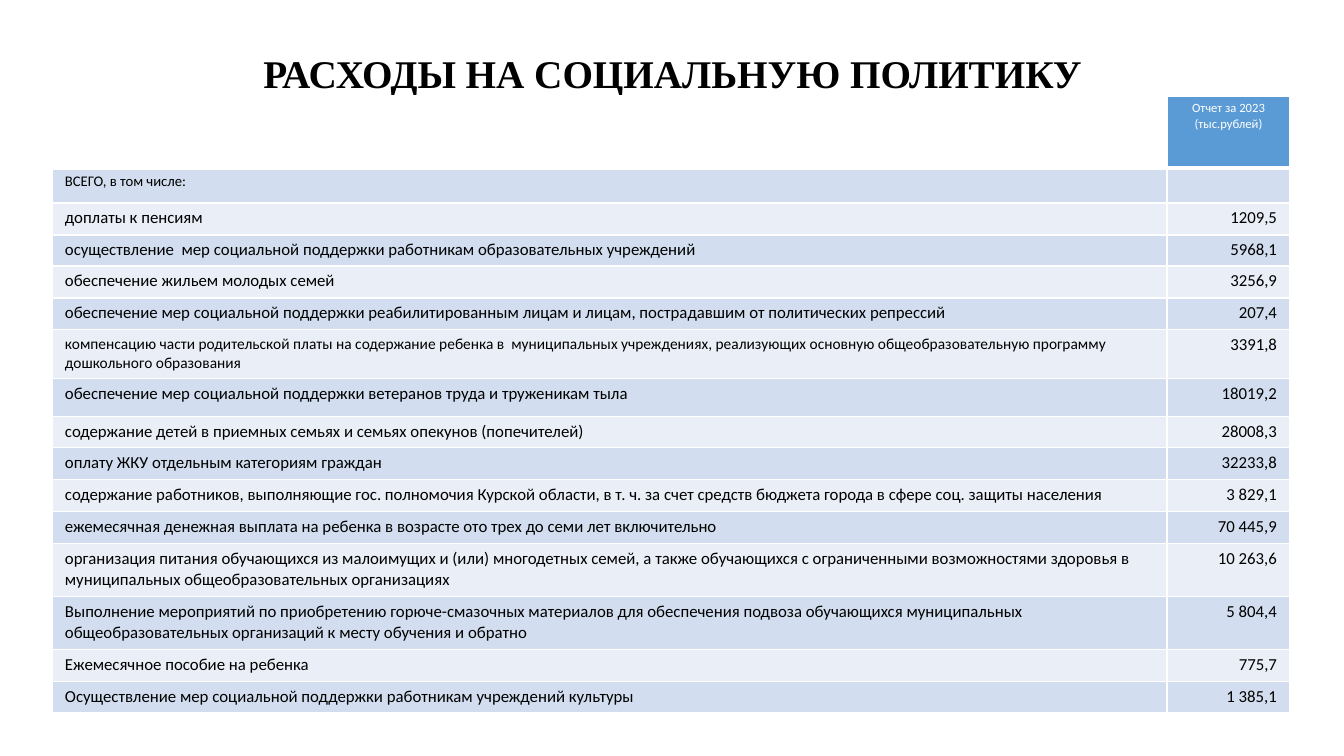
"""Builds a slide with a table of social policy spending."""
from lxml.etree import SubElement
from pptx import Presentation
from pptx.dml.color import RGBColor
from pptx.enum.text import MSO_ANCHOR, PP_ALIGN
from pptx.oxml.ns import qn
from pptx.util import Emu, Pt

TITLE = "РАСХОДЫ НА СОЦИАЛЬНУЮ ПОЛИТИКУ"
HEADER = ["Отчет за 2023", "(тыс.рублей)"]
EXPENSES = [
    ("ВСЕГО, в том числе:", "", 35, 10.5),
    ("доплаты к пенсиям", "1209,5", 32, 12),
    ("осуществление  мер социальной поддержки работникам образовательных учреждений", "5968,1", 31, 12),
    ("обеспечение жильем молодых семей", "3256,9", 32, 12),
    ("обеспечение мер социальной поддержки реабилитированным лицам и лицам, "
     "пострадавшим от политических репрессий", "207,4", 32, 12),
    ("компенсацию части родительской платы на содержание ребенка в  муниципальных учреждениях, "
     "реализующих основную общеобразовательную программу дошкольного образования", "3391,8", 49, 11),
    ("обеспечение мер социальной поддержки ветеранов труда и труженикам тыла", "18019,2", 38, 12),
    ("содержание детей в приемных семьях и семьях опекунов (попечителей)", "28008,3", 31, 12),
    ("оплату ЖКУ отдельным категориям граждан", "32233,8", 32, 12),
    ("содержание работников, выполняющие гос. полномочия Курской области, в т. ч. за счет "
     "средств бюджета города в сфере соц. защиты населения", "3 829,1", 32, 12),
    ("ежемесячная денежная выплата на ребенка в возрасте ото трех до семи лет включительно",
     "70 445,9", 32, 12),
    ("организация питания обучающихся из малоимущих и (или) многодетных семей, а также обучающихся "
     "с ограниченными возможностями здоровья в муниципальных общеобразовательных организациях",
     "10 263,6", 53, 12),
    ("Выполнение мероприятий по приобретению горюче-смазочных материалов для обеспечения подвоза "
     "обучающихся муниципальных общеобразовательных организаций к месту обучения и обратно",
     "5 804,4", 53, 12),
    ("Ежемесячное пособие на ребенка", "775,7", 32, 12),
    ("Осуществление мер социальной поддержки работникам учреждений культуры", "1 385,1", 31, 12),
]
HEADER_HEIGHT = 72
COLUMN_WIDTHS = [1115, 123]
BANDS = ["D2DEEF", "EAEFF7"]
BLACK, WHITE, BLUE = "000000", "FFFFFF", "5B9BD5"


def px(length):
    return Emu(round(length * 914400 / 100.8))


def color(value):
    return RGBColor.from_string(value)


class SlideBuilder:
    def __init__(self, slide, font="Calibri", title_font="Times New Roman"):
        self.slide = slide
        self.font = font
        self.title_font = title_font

    def add_run(self, paragraph, text, size, text_color, font, bold=False):
        run = paragraph.add_run()
        run.text = text
        run.font.size = Pt(size)
        run.font.name = font
        run.font.bold = bold
        run.font.color.rgb = color(text_color)

    def title(self, text, left, top, width, height):
        shape = self.slide.shapes.title
        shape.left, shape.top, shape.width, shape.height = map(px, (left, top, width, height))
        frame = shape.text_frame
        frame.word_wrap = True
        frame.vertical_anchor = MSO_ANCHOR.MIDDLE
        paragraph = frame.paragraphs[0]
        paragraph.alignment = PP_ALIGN.CENTER
        paragraph.line_spacing = 0.9
        self.add_run(paragraph, text, 28, BLACK, self.title_font, True)
        paragraph.add_line_break()

    def table(self, left, top, widths, heights):
        frame = self.slide.shapes.add_table(
            len(heights), len(widths), px(left), px(top), px(sum(widths)), px(sum(heights)))
        table = frame.table
        table.first_row = table.horz_banding = False
        for column, width in zip(table.columns, widths):
            column.width = px(width)
        for row, height in zip(table.rows, heights):
            row.height = px(height)
        return table

    def border(self, cell, side, width):
        line = SubElement(cell._tc.get_or_add_tcPr(), qn(f"a:{side}"), w=str(Pt(width)))
        fill = SubElement(line, qn("a:solidFill"))
        SubElement(fill, qn("a:srgbClr"), val=WHITE)

    def cell(self, cell, lines, size, text_color, alignment, fill, top=1, bottom=1):
        cell.margin_left = cell.margin_right = px(13)
        cell.margin_top = cell.margin_bottom = px(5)
        for side, width in (("lnL", 1), ("lnR", 1), ("lnT", top), ("lnB", bottom)):
            self.border(cell, side, width)
        if fill:
            cell.fill.solid()
            cell.fill.fore_color.rgb = color(fill)
        else:
            cell.fill.background()
        frame = cell.text_frame
        for index, text in enumerate(lines):
            paragraph = frame.paragraphs[0] if index == 0 else frame.add_paragraph()
            paragraph.alignment = alignment
            if text:
                self.add_run(paragraph, text, size, text_color, self.font)
            else:
                paragraph._p.get_or_add_endParaRPr().set("sz", str(round(size * 100)))


def main():
    presentation = Presentation()
    presentation.slide_width, presentation.slide_height = px(1344), px(756)
    builder = SlideBuilder(presentation.slides.add_slide(presentation.slide_layouts[5]))
    builder.title(TITLE, 93, 40, 1159, 146)

    heights = [HEADER_HEIGHT] + [height for _, _, height, _ in EXPENSES]
    table = builder.table(52, 96, COLUMN_WIDTHS, heights)
    builder.cell(table.cell(0, 0), [""], 9, WHITE, PP_ALIGN.CENTER, None, bottom=3)
    builder.cell(table.cell(0, 1), HEADER, 9, WHITE, PP_ALIGN.CENTER, BLUE, bottom=3)
    for row, (name, amount, _, size) in enumerate(EXPENSES, 1):
        band = BANDS[(row - 1) % 2]
        top = 3 if row == 1 else 1
        builder.cell(table.cell(row, 0), [name], size, BLACK, PP_ALIGN.LEFT, band, top)
        builder.cell(table.cell(row, 1), [amount], 12, BLACK, PP_ALIGN.RIGHT, band, top)
    presentation.save("out.pptx")


if __name__ == "__main__":
    main()
